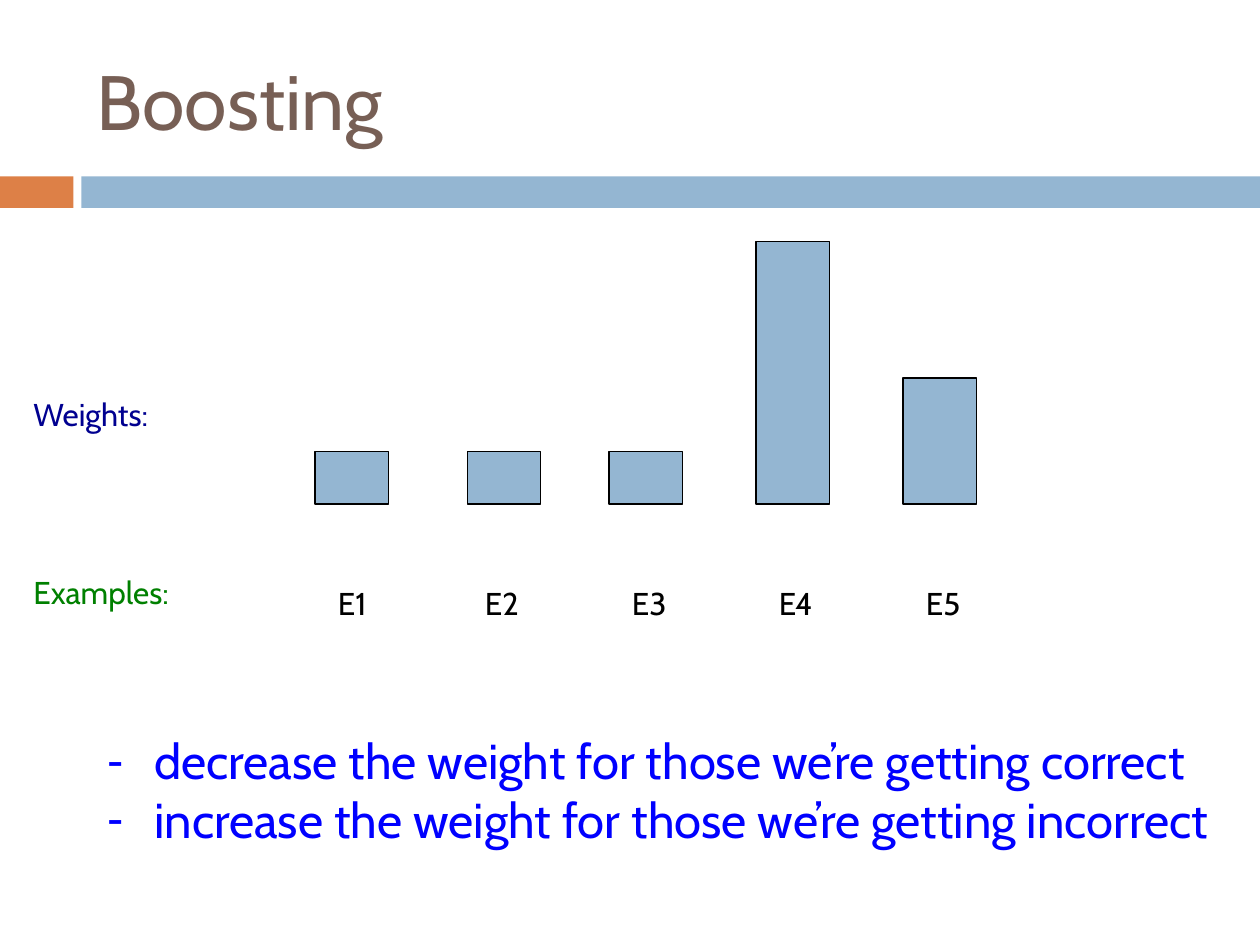
import pptx
import pptx.dml.color
import pptx.enum.shapes
import pptx.enum.text
import pptx.oxml
import pptx.oxml.ns
import pptx.util

Pt = pptx.util.Pt
FONT = "Cabin"
BLUE = "94B6D2"
BASELINE = 288
LABEL_LEFT, LABEL_PITCH = 186, 84
# Left edge and height of each example's weight
WEIGHTS = [(180, 30), (267, 30), (348, 30), (432, 150), (516, 72)]


def color(hex_value):
    return pptx.dml.color.RGBColor.from_string(hex_value)


def write(frame, text, size=18, fill="000000", anchor="TOP"):
    """Fill a text frame, one paragraph for each line of text."""
    frame.word_wrap = True
    frame.auto_size = pptx.enum.text.MSO_AUTO_SIZE.NONE
    frame.vertical_anchor = getattr(pptx.enum.text.MSO_ANCHOR, anchor)
    frame.text = text
    for paragraph in frame.paragraphs:
        paragraph.alignment = pptx.enum.text.PP_ALIGN.LEFT
        paragraph.space_before = Pt(0)
        font = paragraph.runs[0].font
        font.name, font.size = FONT, Pt(size)
        font.color.rgb = color(fill)


def place(placeholder, left, top, width, height):
    placeholder.left, placeholder.top = Pt(left), Pt(top)
    placeholder.width, placeholder.height = Pt(width), Pt(height)


def add_label(slide, text, left, top, width, **style):
    label = slide.shapes.add_textbox(Pt(left), Pt(top), Pt(width), Pt(35))
    write(label.text_frame, text, **style)


def add_bar(slide, left, top, width, height, fill=BLUE, outline=None):
    bar = slide.shapes.add_shape(
        pptx.enum.shapes.MSO_SHAPE.RECTANGLE,
        Pt(left), Pt(top), Pt(width), Pt(height))
    bar.shadow.inherit = False
    bar.fill.solid()
    bar.fill.fore_color.rgb = color(fill)
    if outline:
        bar.line.color.rgb = color(outline)
        bar.line.width = Pt(0.75)
    else:
        bar.line.fill.background()


def add_dashes(frame, indent):
    for paragraph in frame.paragraphs:
        properties = paragraph._p.get_or_add_pPr()
        properties.set("marL", str(Pt(indent)))
        properties.set("indent", str(-Pt(indent)))
        properties.append(pptx.oxml.parse_xml(
            f'<a:buChar {pptx.oxml.ns.nsdecls("a")} char="-"/>'))


def main():
    deck = pptx.Presentation()
    deck.slide_width, deck.slide_height = Pt(720), Pt(540)
    slide = deck.slides.add_slide(deck.slide_layouts[1])

    # Title above the two-colour band
    title = slide.shapes.title
    place(title, 48, 18, 642, 78)
    write(title.text_frame, "Boosting", size=44, fill="775F55", anchor="MIDDLE")
    add_bar(slide, 0, 100.8, 42, 18, fill="DD8047")
    add_bar(slide, 46.5, 100.8, 673.5, 18)

    # Weight bars with their examples below
    for index, (left, height) in enumerate(WEIGHTS):
        add_bar(slide, left, BASELINE - height, 42, height, outline="000000")
        add_label(slide, f"E{index + 1}",
                  LABEL_LEFT + index * LABEL_PITCH, 330, 78)

    # Row names
    add_label(slide, "Weights:", 12, 222, 138, fill="000090")
    add_label(slide, "Examples:", 12, 324, 144, fill="008000")

    # How the weights change
    rules = slide.placeholders[1]
    place(rules, 54, 414, 652, 75)
    write(rules.text_frame,
          "decrease the weight for those we’re getting correct\n"
          "increase the weight for those we’re getting incorrect",
          size=28, fill="0000FF")
    add_dashes(rules.text_frame, 27)

    deck.save("out.pptx")


if __name__ == "__main__":
    main()
